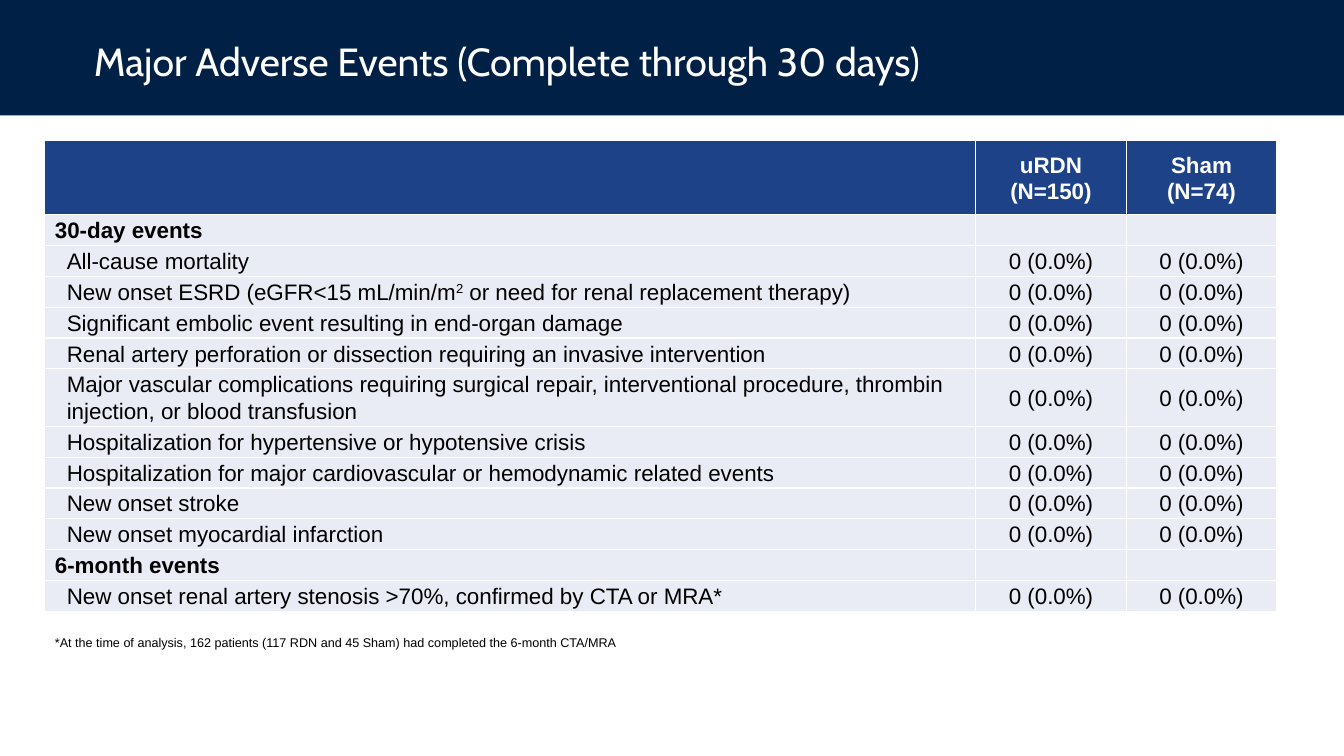
from dataclasses import dataclass

from lxml.etree import SubElement
from pptx import Presentation
from pptx.dml.color import RGBColor
from pptx.enum.shapes import MSO_SHAPE
from pptx.enum.text import MSO_ANCHOR, PP_ALIGN
from pptx.oxml import parse_xml
from pptx.oxml.ns import nsdecls, qn
from pptx.table import _Cell
from pptx.util import Emu, Pt

PX = 6350  # EMU per px, 1920 x 1080 slide
NAVY, BLUE, PALE = "002045", "1E4288", "E9EBF5"
WHITE, BLACK = "FFFFFF", "000000"
COLS = (1330, 215, 215)
HEAD, LINE, FOOT = 106, 44, 68
ZERO = "0 (0.0%)"


@dataclass(frozen=True)
class Event:
    runs: tuple[str, ...]
    group: bool = False
    high: int = LINE


@dataclass(frozen=True)
class Style:
    size: int = 16
    color: str = BLACK
    bold: bool = False
    align: PP_ALIGN = PP_ALIGN.LEFT
    indent: int = 0
    after: int = 0


EVENTS = (
    Event(("30-day events",), group=True),
    Event(("All-cause mortality",)),
    Event(("New onset ESRD (eGFR<15 mL/min/m", "^2",
           " or need for renal replacement therapy)")),
    Event(("Significant embolic event resulting in end-organ damage",)),
    Event(("Renal artery perforation or dissection requiring an invasive intervention",)),
    Event(("Major vascular complications requiring surgical repair, interventional "
           "procedure, thrombin injection, or blood transfusion",), high=75),
    Event(("Hospitalization for hypertensive or hypotensive crisis",)),
    Event(("Hospitalization for major cardiovascular or hemodynamic related events",)),
    Event(("New onset stroke",)),
    Event(("New onset myocardial infarction",)),
    Event(("6-month events",), group=True),
    Event(("New onset renal artery stenosis >70%, confirmed by CTA or MRA*",)),
)
TITLE = Style(28, WHITE)
HEADER = Style(color=WHITE, bold=True, align=PP_ALIGN.CENTER)
GROUP = Style(bold=True, after=3)
ITEM = Style(indent=17, after=3)
VALUE = Style(align=PP_ALIGN.CENTER, after=3)
NOTE = Style(9)


def px(n: int) -> Emu:
    return Emu(n * PX)


def rgb(code: str) -> RGBColor:
    return RGBColor.from_string(code)


def write(para, runs: tuple[str, ...], style: Style, face: str = "Arial") -> None:
    """Add runs; "^" raises a run and "\n" breaks the line."""
    para.alignment = style.align
    for text in runs:
        if text == "\n":
            para.add_line_break()
            continue
        run = para.add_run()
        run.text = text.removeprefix("^")
        font = run.font
        font.name, font.size, font.bold = face, Pt(style.size), style.bold
        font.color.rgb = rgb(style.color)
        if text.startswith("^"):
            run._r.get_or_add_rPr().set("baseline", "30000")


def frame(cell: _Cell, fill: str | None) -> None:
    """Set the margins, fill and white borders of a cell."""
    cell.margin_top = cell.margin_bottom = 0
    cell.vertical_anchor = MSO_ANCHOR.MIDDLE
    if fill:
        cell.fill.solid()
        cell.fill.fore_color.rgb = rgb(fill)
    else:
        cell.fill.background()
    props = cell._tc.get_or_add_tcPr()
    for spot, side in enumerate(("lnL", "lnR", "lnT", "lnB")):
        props.insert(spot, parse_xml(
            f'<a:{side} {nsdecls("a")} w="12700"><a:solidFill>'
            f'<a:srgbClr val="{WHITE}"/></a:solidFill></a:{side}>'))


def put(cell: _Cell, runs: tuple[str, ...], style: Style, fill: str | None) -> None:
    frame(cell, fill)
    para = cell.text_frame.paragraphs[0]
    if not runs:  # keeps an empty cell as low as its row
        SubElement(para._p, qn("a:endParaRPr"), sz=str(style.size * 100))
        return
    write(para, runs, style)
    para.line_spacing = 1.07
    para.space_after = Pt(style.after)
    if style.indent:
        para._p.get_or_add_pPr().set("marL", str(px(style.indent)))


def banner(slide) -> None:
    band = slide.shapes.add_shape(MSO_SHAPE.RECTANGLE, 0, 0, px(1920), px(165))
    band.shadow.inherit = False
    band.fill.solid()
    band.fill.fore_color.rgb = rgb(NAVY)
    band.line.fill.background()
    box = slide.shapes.add_textbox(px(120), px(17), px(1656), px(148)).text_frame
    box.word_wrap = True
    box.vertical_anchor = MSO_ANCHOR.MIDDLE
    para = box.paragraphs[0]
    write(para, ("Major Adverse Events (Complete through 30 days)",), TITLE, "Cabin")
    para.line_spacing = 0.9


def events(slide) -> None:
    highs = (HEAD, *(event.high for event in EVENTS), FOOT)
    table = slide.shapes.add_table(len(highs), len(COLS), px(64), px(201),
                                   px(sum(COLS)), px(sum(highs))).table
    table.first_row = table.horz_banding = False
    for col, wide in zip(table.columns, COLS):
        col.width = px(wide)
    for row, high in zip(table.rows, highs):
        row.height = px(high)

    # Header
    heads = ((), ("uRDN", "\n", "(N=150)"), ("Sham", "\n", "(N=74)"))
    for c, runs in enumerate(heads):
        put(table.cell(0, c), runs, HEADER, BLUE)

    # Event rows
    for r, event in enumerate(EVENTS, 1):
        put(table.cell(r, 0), event.runs, GROUP if event.group else ITEM, PALE)
        for c in (1, 2):
            put(table.cell(r, c), () if event.group else (ZERO,), VALUE, PALE)

    # Footnote across all columns
    last = len(highs) - 1
    note = table.cell(last, 0)
    note.merge(table.cell(last, 2))
    put(note, ("*At the time of analysis, 162 patients (117 RDN and 45 Sham) "
               "had completed the 6-month CTA/MRA",), NOTE, None)
    note.margin_top = px(22)
    for c in (1, 2):
        put(table.cell(last, c), (), NOTE, None)


def main() -> None:
    deck = Presentation()
    deck.slide_width, deck.slide_height = px(1920), px(1080)
    slide = deck.slides.add_slide(deck.slide_layouts[6])
    banner(slide)
    events(slide)
    deck.save("out.pptx")


if __name__ == "__main__":
    main()
